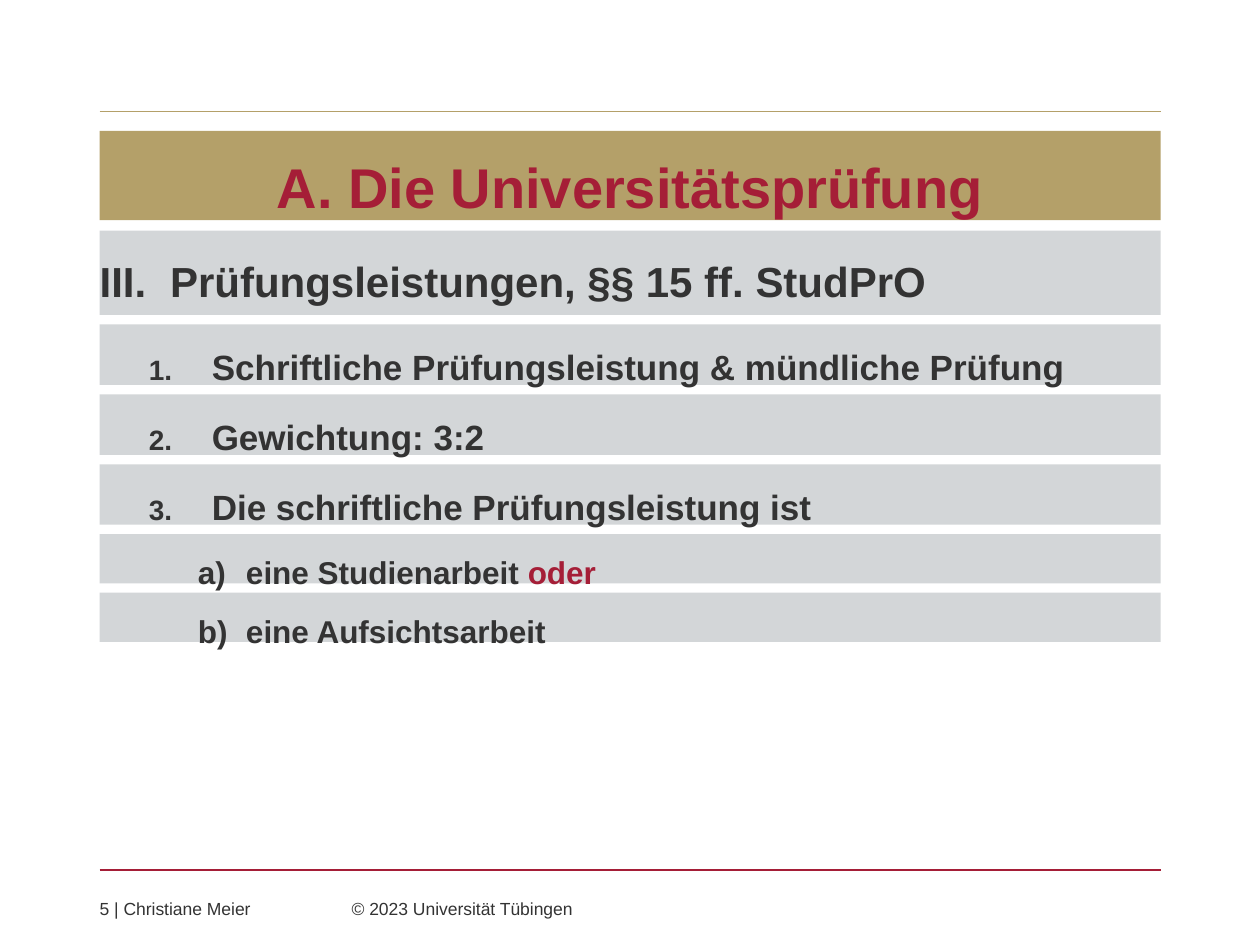
from lxml import etree
from pptx import Presentation
from pptx.dml.color import RGBColor
from pptx.enum import shapes, text
from pptx.oxml import ns
from pptx.util import Cm, Pt

COLORS = {"gold": "B4A069", "red": "A51E37", "gray": "D3D6D8", "dark": "333333"}
FONT = "Arial"
LEFT, WIDTH, GAP = 2.01, 21.39, 0.19

# Outline levels: bar height, text size, left margin, hanging indent (cm and pt)
LEVELS = [
    {"height": 1.70, "size": 24, "margin": 1.42, "hang": 1.42,
     "scheme": "romanUcPeriod", "percent": 100},
    {"height": 1.22, "size": 20, "margin": 2.26, "hang": 1.27,
     "scheme": "arabicPeriod", "percent": 80},
    {"height": 0.99, "size": 18, "margin": 2.95, "hang": 0.97,
     "scheme": "alphaLcParenR", "percent": 100},
]

# Level, number, text runs with their colours
OUTLINE = [
    (0, 3, [("Prüfungsleistungen, §§ 15 ff. StudPrO", "dark")]),
    (1, 1, [("Schriftliche Prüfungsleistung & mündliche Prüfung", "dark")]),
    (1, 2, [("Gewichtung: 3:2", "dark")]),
    (1, 3, [("Die schriftliche Prüfungsleistung ist", "dark")]),
    (2, 1, [("eine Studienarbeit ", "dark"), ("oder", "red")]),
    (2, 2, [("eine Aufsichtsarbeit", "dark")]),
]


def rgb(name):
    return RGBColor.from_string(COLORS[name])


def add_element(parent, tag, **attributes):
    element = etree.SubElement(parent, ns.qn(tag))
    for key, value in attributes.items():
        element.set(key, str(value))
    return element


def place(shape, left, top, width, height):
    shape.left, shape.top = Cm(left), Cm(top)
    shape.width, shape.height = Cm(width), Cm(height)


def write_text(shape, runs, size, bold=False, align=text.PP_ALIGN.LEFT,
               anchor=text.MSO_ANCHOR.TOP, spacing=1.0):
    """Fill a shape with one paragraph and return that paragraph."""
    frame = shape.text_frame
    frame.word_wrap = True
    frame.auto_size = text.MSO_AUTO_SIZE.NONE
    frame.vertical_anchor = anchor
    frame.margin_left = frame.margin_right = 0
    frame.margin_top = frame.margin_bottom = 0
    paragraph = frame.paragraphs[0]
    paragraph.alignment = align
    paragraph.line_spacing = spacing
    paragraph.space_before = Pt(0)
    for words, color in runs:
        run = paragraph.add_run()
        run.text = words
        run.font.name = FONT
        run.font.size = Pt(size)
        run.font.bold = bold
        run.font.color.rgb = rgb(color)
    return paragraph


def add_rule(slide, left, top, width, color):
    line = slide.shapes.add_connector(
        shapes.MSO_CONNECTOR.STRAIGHT, Cm(left), Cm(top), Cm(left + width), Cm(top))
    line.line.color.rgb = rgb(color)
    line.line.width = Pt(0.75)
    add_element(line.element.spPr, "a:effectLst")


def add_title(slide, left, top, width, height):
    title = slide.shapes.title
    place(title, left, top, width, height)
    title.fill.solid()
    title.fill.fore_color.rgb = rgb("gold")
    write_text(title, [("A. Die Universitätsprüfung", "red")], 32, bold=True,
               align=text.PP_ALIGN.CENTER, anchor=text.MSO_ANCHOR.BOTTOM, spacing=1.5)


def add_bar(slide, left, top, width, level, number, runs):
    """Add one numbered outline bar."""
    style = LEVELS[level]
    bar = slide.shapes.add_shape(shapes.MSO_SHAPE.RECTANGLE, Cm(left), Cm(top),
                                 Cm(width), Cm(style["height"]))
    bar.shadow.inherit = False
    bar.fill.solid()
    bar.fill.fore_color.rgb = rgb("gray")
    bar.line.fill.background()
    paragraph = write_text(bar, runs, style["size"], bold=True, spacing=1.5)
    paragraph.level = level
    properties = paragraph._p.get_or_add_pPr()
    properties.set("marL", str(Cm(style["margin"])))
    properties.set("indent", str(-Cm(style["hang"])))
    add_element(properties, "a:buSzPct", val=style["percent"] * 1000)
    add_element(properties, "a:buFont", typeface=FONT)
    add_element(properties, "a:buAutoNum", type=style["scheme"], startAt=number)


def add_outline(slide, left, top, width):
    for level, number, runs in OUTLINE:
        add_bar(slide, left, top, width, level, number, runs)
        top += LEVELS[level]["height"] + GAP


def add_footer(slide, left, top, width, height):
    box = slide.shapes.add_textbox(Cm(left), Cm(top), Cm(width), Cm(height))
    paragraph = write_text(
        box, [("5 | Christiane Meier\t© 2023 Universität Tübingen", "dark")], 10)
    tabs = add_element(paragraph._p.get_or_add_pPr(), "a:tabLst")
    add_element(tabs, "a:tab", pos=Cm(5.08), algn="l")


def main():
    presentation = Presentation()
    presentation.slide_width, presentation.slide_height = Cm(25.4), Cm(19.05)
    slide = presentation.slides.add_slide(presentation.slide_layouts[5])

    # Rules above and below the content
    add_rule(slide, LEFT, 2.25, WIDTH, "gold")
    add_rule(slide, LEFT, 17.54, WIDTH, "red")

    # Title, outline and footer
    add_title(slide, LEFT, 2.64, WIDTH, 1.8)
    add_outline(slide, LEFT, 4.65, WIDTH)
    add_footer(slide, LEFT, 18.11, WIDTH, 0.43)

    presentation.save("out.pptx")


if __name__ == "__main__":
    main()
